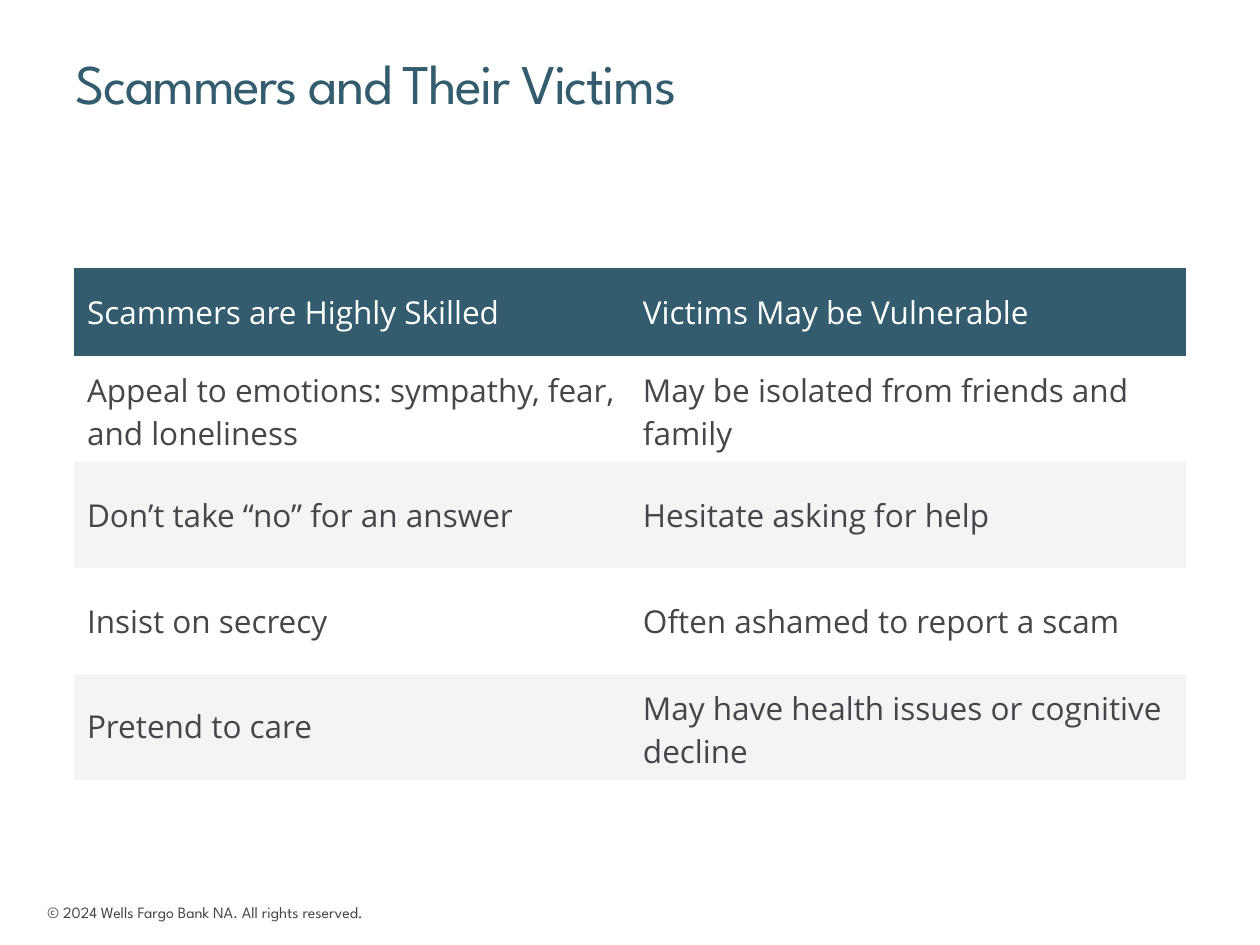
from typing import NamedTuple

from pptx import Presentation
from pptx.dml.color import RGBColor
from pptx.enum.text import MSO_ANCHOR as Anchor, MSO_AUTO_SIZE as AutoSize, PP_ALIGN as Align
from pptx.util import Pt

PX = 7257.14  # EMU per px, 126 px to the inch
COLORS = {"teal": "345C6F", "text": "44464A", "white": "FFFFFF", "band": "F2F5F3"}
DISPLAY, BODY = "League Spartan", "Open Sans"
NO_GRID_STYLE = "{2D5ABB26-0587-4C30-8999-92F81FD0307C}"


class Box(NamedTuple):
    left: int
    top: int
    width: int
    height: int


class Row(NamedTuple):
    scammers: str
    victims: str
    height: int = 106
    fill: str = "white"
    color: str = "text"


ROWS = [
    Row("Scammers are Highly Skilled", "Victims May be Vulnerable", 88, "teal", "white"),
    Row("Appeal to emotions: sympathy, fear, and loneliness",
        "May be isolated from friends and family"),
    Row("Don’t take “no” for an answer", "Hesitate asking for help", fill="band"),
    Row("Insist on secrecy", "Often ashamed to report a scam"),
    Row("Pretend to care", "May have health issues or cognitive decline", fill="band"),
]


def emu(px: int) -> int:
    return round(px * PX)


def rgb(name: str) -> RGBColor:
    return RGBColor.from_string(COLORS[name])


def style(paragraph, size: int, face: str, color: str) -> None:
    font = paragraph.font
    font.size, font.name = Pt(size), face
    font.color.rgb = rgb(color)


def draw_title(slide, text: str, box: Box) -> None:
    title = slide.shapes.title
    title.left, title.top, title.width, title.height = map(emu, box)
    frame = title.text_frame
    frame.text = text
    frame.auto_size = AutoSize.NONE
    frame.vertical_anchor = Anchor.BOTTOM
    frame.margin_left = frame.margin_right = frame.margin_top = frame.margin_bottom = 0
    heading = frame.paragraphs[0]
    heading.alignment = Align.LEFT
    heading.line_spacing = 1.05
    style(heading, 32, DISPLAY, "teal")
    # Tighten the letter spacing by one point
    heading.runs[0]._r.get_or_add_rPr().set("spc", "-100")


def draw_comparison(slide, rows: list[Row], box: Box) -> None:
    table = slide.shapes.add_table(len(rows), 2, *map(emu, box)).table
    table.horz_banding = False
    table.first_row = False
    table._tbl.tblPr.find("{*}tableStyleId").text = NO_GRID_STYLE
    for row, line in zip(rows, table.rows):
        line.height = emu(row.height)
        for cell, text in zip(line.cells, (row.scammers, row.victims)):
            cell.text = text
            cell.vertical_anchor = Anchor.MIDDLE
            cell.margin_left = cell.margin_right = emu(13)
            cell.margin_top = cell.margin_bottom = emu(13)
            cell.fill.solid()
            cell.fill.fore_color.rgb = rgb(row.fill)
            style(cell.text_frame.paragraphs[0], 18, BODY, row.color)


def draw_copyright(slide, text: str, box: Box) -> None:
    frame = slide.shapes.add_textbox(*map(emu, box)).text_frame
    frame.text = text
    frame.word_wrap = False
    frame.auto_size = AutoSize.SHAPE_TO_FIT_TEXT
    style(frame.paragraphs[0], 9, DISPLAY, "text")


def main() -> None:
    deck = Presentation()
    deck.slide_width, deck.slide_height = emu(1260), emu(945)
    slide = deck.slides.add_slide(deck.slide_layouts[5])  # title only

    draw_copyright(slide, "© 2024 Wells Fargo Bank NA. All rights reserved.",
                   Box(35, 897, 384, 32))
    draw_title(slide, "Scammers and Their Victims", Box(76, 44, 1134, 72))
    draw_comparison(slide, ROWS, Box(74, 268, 1112, sum(row.height for row in ROWS)))

    deck.save("out.pptx")


if __name__ == "__main__":
    main()
